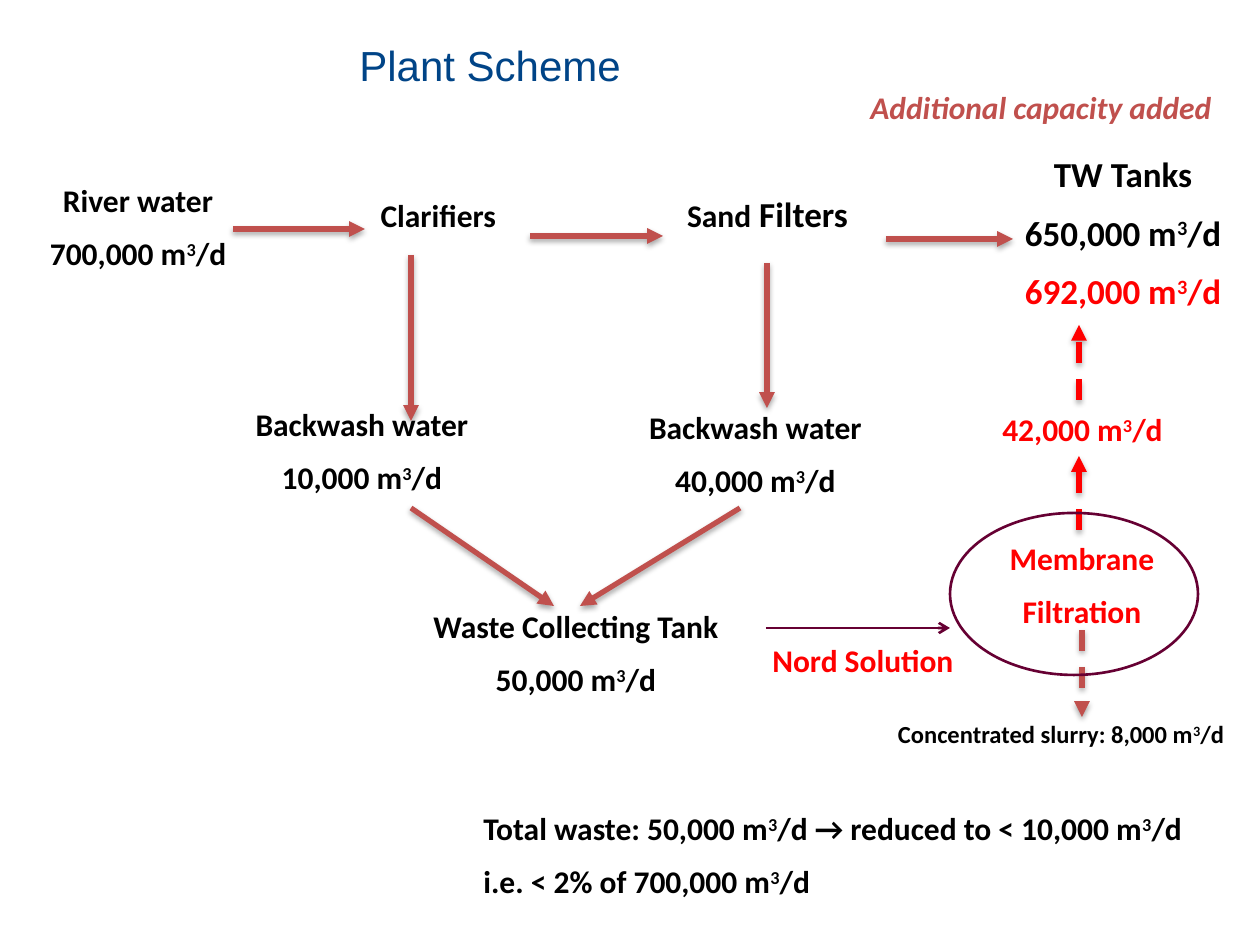
from lxml import etree
from pptx import Presentation
from pptx import util as u
from pptx.dml.color import RGBColor
from pptx.enum import dml, shapes, text
from pptx.oxml import parse_xml
from pptx.oxml.ns import nsdecls, qn

EMU_PER_PX = 914400 / 126
BLACK, RED, BRICK, PLUM, NAVY = "000000", "FF0000", "C0504D", "660033", "004487"
SHADOW = (
    f'<a:effectLst {nsdecls("a")}><a:outerShdw blurRad="40000" dist="23000" dir="5400000" '
    'rotWithShape="0"><a:srgbClr val="000000"><a:alpha val="35000"/></a:srgbClr>'
    "</a:outerShdw></a:effectLst>"
)


def px(value):
    return u.Emu(round(value * EMU_PER_PX))


def rgb(colour):
    return RGBColor.from_string(colour)


class SchemeSlide:
    """Draws the labels, flow arrows and outlines of a plant scheme on one slide."""

    def __init__(self, presentation):
        self.slide = presentation.slides.add_slide(presentation.slide_layouts[6])

    def add_run(self, paragraph, wording, size, colour, font="Calibri", bold=True, italic=False):
        for index, part in enumerate(wording.split("³")):
            for piece, raised in (("3", True), (part, False)) if index else ((part, False),):
                if not piece:
                    continue
                run = paragraph.add_run()
                run.text = piece
                run.font.size = u.Pt(size)
                run.font.name = font
                run.font.bold = bold
                run.font.italic = italic
                run.font.color.rgb = rgb(colour)
                if raised:
                    run._r.get_or_add_rPr().set("baseline", "30000")

    def label(self, box, *lines, size=18, colour=BLACK, align=text.PP_ALIGN.CENTER,
              spacing=None, **style):
        frame = self.slide.shapes.add_textbox(*map(px, box)).text_frame
        frame.word_wrap = True
        for index, line in enumerate(lines):
            paragraph = frame.add_paragraph() if index else frame.paragraphs[0]
            paragraph.alignment = align
            if spacing:
                paragraph.line_spacing = spacing
            if index:
                paragraph.space_before = u.Pt(round(size * 0.48, 1))
            runs = [(line, size, colour)] if isinstance(line, str) else line
            for wording, run_size, run_colour in runs:
                self.add_run(paragraph, wording, run_size, run_colour, **style)

    def arrow(self, start, end, colour=BRICK, width=3, head="triangle", dashed=False, shadow=True):
        connector = self.slide.shapes.add_connector(
            shapes.MSO_CONNECTOR.STRAIGHT, *map(px, start + end))
        connector.line.color.rgb = rgb(colour)
        connector.line.width = u.Pt(width)
        if dashed:
            connector.line.dash_style = dml.MSO_LINE.DASH
        etree.SubElement(connector.line._get_or_add_ln(), qn("a:tailEnd"), type=head)
        effect = parse_xml(SHADOW if shadow else f'<a:effectLst {nsdecls("a")}/>')
        connector._element.spPr.append(effect)

    def ellipse(self, box, colour, width):
        shape = self.slide.shapes.add_shape(shapes.MSO_SHAPE.OVAL, *map(px, box))
        shape.shadow.inherit = False
        shape.fill.background()
        shape.line.color.rgb = rgb(colour)
        shape.line.width = u.Pt(width)


def main():
    presentation = Presentation()
    presentation.slide_width, presentation.slide_height = px(1260), px(945)
    scheme = SchemeSlide(presentation)
    left = text.PP_ALIGN.LEFT

    scheme.label((347, 39, 465, 58), "Plant Scheme", size=24, colour=NAVY, align=left,
                 spacing=0.9, font="Arial", bold=False)
    scheme.label((858, 82, 384, 50), "Additional capacity added", colour=BRICK, align=left,
                 italic=True)

    flows = [
        ((233, 229), (365, 229)),
        ((530, 236), (663, 236)),
        ((886, 239), (1013, 239)),
        ((411, 255), (411, 421)),
        ((767, 263), (767, 408)),
        ((411, 508), (554, 606)),
        ((740, 508), (580, 606)),
    ]
    for start, end in flows:
        scheme.arrow(start, end)

    stages = [
        ((16, 175, 244, 108), "River water", "700,000 m³/d"),
        ((341, 190, 202, 50), "Clarifiers "),
        ((653, 186, 237, 55), [("Sand", 18, BLACK), (" Filters ", 20, BLACK)]),
        ((222, 399, 280, 108), "Backwash water", "10,000 m³/d"),
        ((593, 402, 325, 108), "Backwash water", "40,000 m³/d"),
        ((411, 601, 330, 108), "Waste Collecting Tank", "50,000 m³/d"),
    ]
    for box, *lines in stages:
        scheme.label(box, *lines)

    scheme.label((995, 146, 256, 183), "TW Tanks", "650,000 m³/d",
                 [("692,000 m³/d", 20, RED)], size=20)

    scheme.arrow((1082, 630), (1082, 717), dashed=True)
    for bottom, top in ((530, 456), (400, 325)):
        scheme.arrow((1079, bottom), (1079, top), colour=RED, dashed=True)
    scheme.label((910, 533, 344, 108), "Membrane", " Filtration ", colour=RED)
    scheme.label((966, 404, 233, 50), "42,000 m³/d", colour=RED)
    scheme.label((750, 635, 226, 50), "Nord Solution", colour=RED)
    scheme.label((882, 713, 358, 43), "Concentrated slurry: 8,000 m³/d", size=14)
    scheme.ellipse((950, 513, 248, 162), PLUM, 1.5)
    scheme.arrow((766, 628), (950, 628), colour=PLUM, width=1.5, head="arrow", shadow=False)

    scheme.label((471, 803, 769, 108),
                 "Total waste: 50,000 m³/d → reduced to < 10,000 m³/d",
                 "i.e. < 2% of 700,000 m³/d", align=left)

    presentation.save("out.pptx")


if __name__ == "__main__":
    main()
